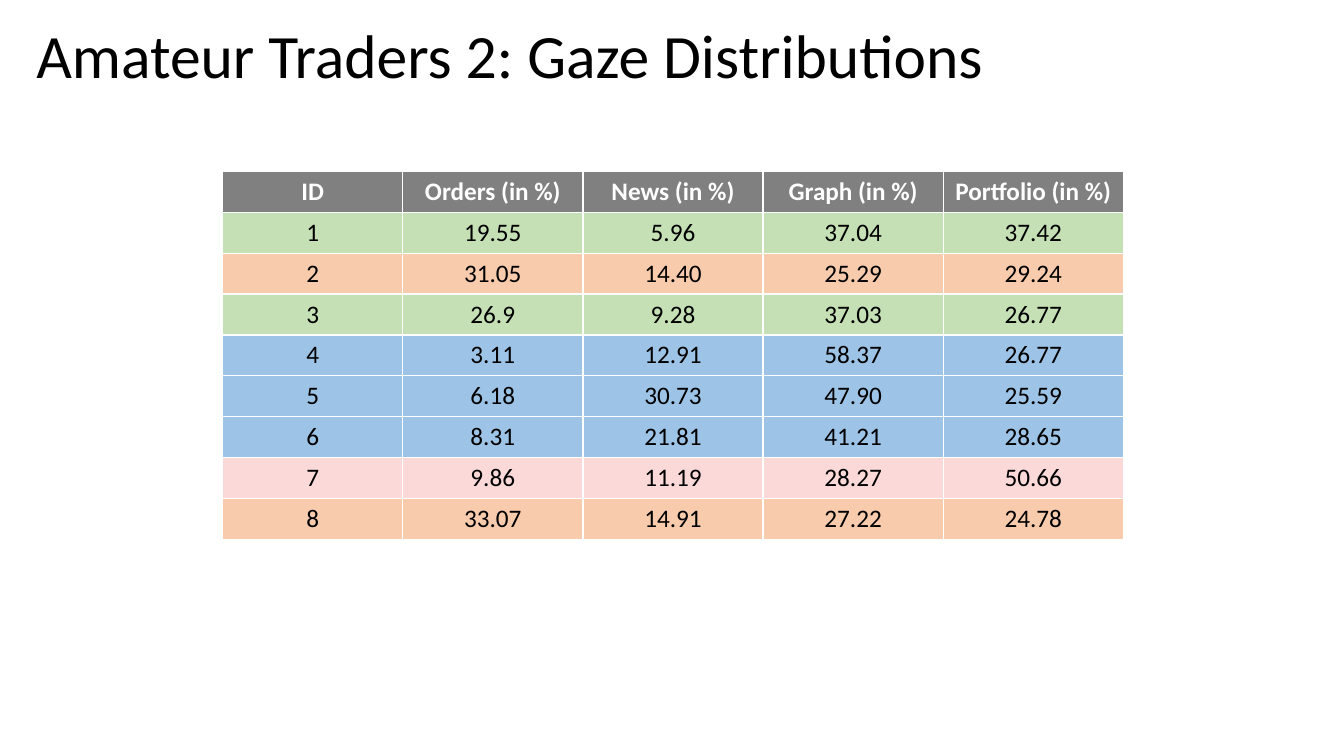
from dataclasses import dataclass

from lxml.etree import SubElement
from pptx import Presentation
from pptx.dml.color import RGBColor
from pptx.enum.text import MSO_ANCHOR, MSO_AUTO_SIZE, PP_ALIGN
from pptx.oxml.ns import qn
from pptx.util import Cm, Pt


@dataclass(frozen=True)
class Theme:
    font: str = "Calibri"
    title_size: int = 44
    table_size: int = 18
    black: str = "000000"
    white: str = "FFFFFF"
    gray: str = "808080"
    green: str = "C5E0B4"
    orange: str = "F8CBAD"
    blue: str = "9DC3E6"
    red: str = "F58484"
    red_opacity: int = 30


theme = Theme()


def write_text(text_frame, text, *, size, color, bold=False, align=PP_ALIGN.LEFT, line_spacing=None):
    paragraph = text_frame.paragraphs[0]
    paragraph.alignment = align
    paragraph.line_spacing = line_spacing
    run = paragraph.add_run()
    run.text = text
    run.font.name = theme.font
    run.font.size = Pt(size)
    run.font.bold = bold
    run.font.color.rgb = RGBColor.from_string(color)


# Slide
presentation = Presentation()
presentation.slide_width, presentation.slide_height = Cm(33.87), Cm(19.05)
slide = presentation.slides.add_slide(presentation.slide_layouts[5])

# Title
title = slide.shapes.title
title.left, title.top, title.width, title.height = Cm(0.66), Cm(-0.36), Cm(29.21), Cm(3.68)
title.text_frame.auto_size = MSO_AUTO_SIZE.NONE
title.text_frame.vertical_anchor = MSO_ANCHOR.MIDDLE
write_text(title.text_frame, "Amateur Traders 2: Gaze Distributions",
           size=theme.title_size, color=theme.black, line_spacing=0.9)

# Gaze shares per trader, each row with its group colour
gaze_rows = [
    (theme.gray, "ID", "Orders (in %)", "News (in %)", "Graph (in %)", "Portfolio (in %)"),
    (theme.green, "1", "19.55", "5.96", "37.04", "37.42"),
    (theme.orange, "2", "31.05", "14.40", "25.29", "29.24"),
    (theme.green, "3", "26.9", "9.28", "37.03", "26.77"),
    (theme.blue, "4", "3.11", "12.91", "58.37", "26.77"),
    (theme.blue, "5", "6.18", "30.73", "47.90", "25.59"),
    (theme.blue, "6", "8.31", "21.81", "41.21", "28.65"),
    (theme.red, "7", "9.86", "11.19", "28.27", "50.66"),
    (theme.orange, "8", "33.07", "14.91", "27.22", "24.78"),
]

# Table: the default style supplies the white cell borders
row_count, column_count = len(gaze_rows), len(gaze_rows[0]) - 1
table = slide.shapes.add_table(row_count, column_count, Cm(5.61), Cm(4.32),
                               Cm(4.54) * column_count, Cm(1.03) * row_count).table
table.horz_banding = False

for row_index, (fill_color, *values) in enumerate(gaze_rows):
    is_header = row_index == 0
    for column_index, value in enumerate(values):
        cell = table.cell(row_index, column_index)
        cell.fill.solid()
        cell.fill.fore_color.rgb = RGBColor.from_string(fill_color)
        if fill_color == theme.red:
            color_element = cell.fill._xPr.find(qn("a:solidFill"))[0]
            SubElement(color_element, qn("a:alpha"), val=str(theme.red_opacity * 1000))
        write_text(cell.text_frame, value, size=theme.table_size, bold=is_header,
                   color=theme.white if is_header else theme.black, align=PP_ALIGN.CENTER)

presentation.save("out.pptx")
